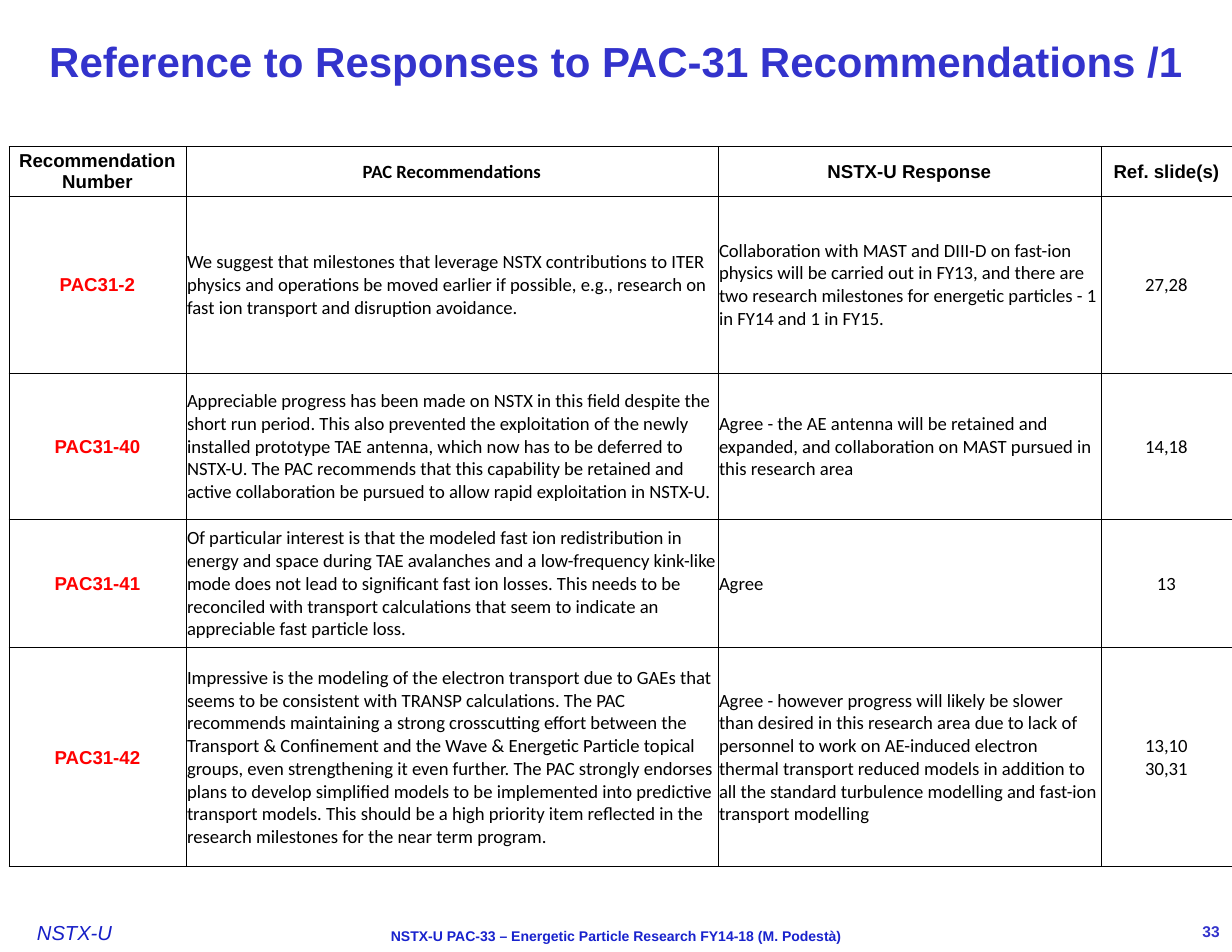
from dataclasses import dataclass

from lxml.etree import SubElement
from pptx import Presentation
from pptx.dml.color import RGBColor as RGB
from pptx.enum.text import MSO_ANCHOR as Anchor, MSO_AUTO_SIZE as AutoSize, PP_ALIGN as Align
from pptx.oxml.ns import qn
from pptx.util import Inches, Pt


@dataclass(frozen=True)
class TextStyle:
    size: float
    color: str
    font: str = "Arial"
    bold: bool = False
    italic: bool = False
    align: Align = Align.CENTER


class Theme:
    title = TextStyle(27, "3333CC", bold=True)
    project = TextStyle(13, "171FC7", italic=True, align=Align.LEFT)
    footer = TextStyle(9, "1822CD", bold=True)
    page = TextStyle(10, "3333CC", bold=True, align=Align.RIGHT)
    heading = TextStyle(12, "000000", bold=True)
    pac_heading = TextStyle(12, "000000", "Calibri", bold=True)
    number = TextStyle(12, "FF0000", bold=True)
    prose = TextStyle(12, "000000", "Calibri", align=Align.LEFT)
    reference = TextStyle(12, "000000", "Calibri")
    border = "000000"
    border_width = Pt(0.5)


class SlideBuilder:
    def __init__(self, slide):
        self.slide = slide

    def set_text(self, frame, text, style):
        frame.text = text
        for paragraph in frame.paragraphs:
            paragraph.alignment = style.align
            font = paragraph.font
            font.name, font.size = style.font, Pt(style.size)
            font.bold, font.italic = style.bold, style.italic
            font.color.rgb = RGB.from_string(style.color)

    def set_frame(self, frame, margins, anchor):
        frame.word_wrap = True
        frame.auto_size = AutoSize.NONE
        frame.vertical_anchor = anchor
        across, down = margins
        frame.margin_left = frame.margin_right = Inches(across)
        frame.margin_top = frame.margin_bottom = Inches(down)

    def title(self, text, left, top, width, height):
        heading = self.slide.shapes.title
        heading.left, heading.top = Inches(left), Inches(top)
        heading.width, heading.height = Inches(width), Inches(height)
        self.set_frame(heading.text_frame, (0.11, 0.06), Anchor.MIDDLE)
        self.set_text(heading.text_frame, text, Theme.title)

    def label(self, text, style, box, margins=(0.11, 0.06), anchor=Anchor.TOP):
        frame = self.slide.shapes.add_textbox(*map(Inches, box)).text_frame
        self.set_frame(frame, margins, anchor)
        self.set_text(frame, text, style)

    def cell(self, cell, text, style):
        cell.vertical_anchor = Anchor.MIDDLE
        cell.margin_left = cell.margin_right = cell.margin_top = Inches(0.01)
        cell.margin_bottom = 0
        self.set_text(cell.text_frame, text, style)
        # Borders come before the fill in the cell properties
        properties = cell._tc.get_or_add_tcPr()
        for side in ("a:lnL", "a:lnR", "a:lnT", "a:lnB"):
            line = SubElement(properties, qn(side), w=str(Theme.border_width))
            fill = SubElement(line, qn("a:solidFill"))
            SubElement(fill, qn("a:srgbClr"), val=Theme.border)
        cell.fill.background()

    def table(self, rows, heading_styles, body_styles, left, top, widths, heights):
        box = map(Inches, (left, top, sum(widths), sum(heights)))
        table = self.slide.shapes.add_table(len(heights), len(widths), *box).table
        table.first_row = table.horz_banding = False
        for column, width in zip(table.columns, widths):
            column.width = Inches(width)
        for row, height in zip(table.rows, heights):
            row.height = Inches(height)
        for r, texts in enumerate(rows):
            styles = body_styles if r else heading_styles
            for c, (text, style) in enumerate(zip(texts, styles)):
                self.cell(table.cell(r, c), text, style)


RECOMMENDATIONS = [
    ("Recommendation Number", "PAC Recommendations", "NSTX-U Response", "Ref. slide(s)"),
    ("PAC31-2",
     "We suggest that milestones that leverage NSTX contributions to ITER physics and "
     "operations be moved earlier if possible, e.g., research on fast ion transport and "
     "disruption avoidance.",
     "Collaboration with MAST and DIII-D on fast-ion physics will be carried out in FY13, "
     "and there are two research milestones for energetic particles - 1 in FY14 and 1 in FY15.",
     "27,28"),
    ("PAC31-40",
     "Appreciable progress has been made on NSTX in this field despite the short run period. "
     "This also prevented the exploitation of the newly installed prototype TAE antenna, which "
     "now has to be deferred to NSTX-U. The PAC recommends that this capability be retained and "
     "active collaboration be pursued to allow rapid exploitation in NSTX-U.",
     "Agree - the AE antenna will be retained and expanded, and collaboration on MAST pursued "
     "in this research area",
     "14,18"),
    ("PAC31-41",
     "Of particular interest is that the modeled fast ion redistribution in energy and space "
     "during TAE avalanches and a low-frequency kink-like mode does not lead to significant "
     "fast ion losses. This needs to be reconciled with transport calculations that seem to "
     "indicate an appreciable fast particle loss.",
     "Agree",
     "13"),
    ("PAC31-42",
     "Impressive is the modeling of the electron transport due to GAEs that seems to be "
     "consistent with TRANSP calculations. The PAC recommends maintaining a strong crosscutting "
     "effort between the Transport & Confinement and the Wave & Energetic Particle topical "
     "groups, even strengthening it even further. The PAC strongly endorses plans to develop "
     "simplified models to be implemented into predictive transport models. This should be a "
     "high priority item reflected in the research milestones for the near term program.",
     "Agree - however progress will likely be slower than desired in this research area due to "
     "lack of personnel to work on AE-induced electron thermal transport reduced models in "
     "addition to all the standard turbulence modelling and fast-ion transport modelling",
     "13,10\n30,31"),
]


def main():
    deck = Presentation()
    deck.slide_width, deck.slide_height = Inches(11), Inches(8.5)
    title_only = deck.slide_layouts[5]
    page = SlideBuilder(deck.slides.add_slide(title_only))

    # Title
    page.title("Reference to Responses to PAC-31 Recommendations /1", 0, 0, 11, 1.09)

    # Footer
    footer_top = 8.22
    page.label("NSTX-U", Theme.project, (0.33, footer_top, 0.95, 0.22), margins=(0, 0))
    page.label("NSTX-U PAC-33 – Energetic Particle Research FY14-18 (M. Podestà)",
               Theme.footer, (2.2, footer_top, 6.6, 0.42))
    page.label("33", Theme.page, (10.08, footer_top, 0.92, 0.19), anchor=Anchor.MIDDLE)

    # Recommendations and responses
    page.table(
        RECOMMENDATIONS,
        heading_styles=(Theme.heading, Theme.pac_heading, Theme.heading, Theme.heading),
        body_styles=(Theme.number, Theme.prose, Theme.prose, Theme.reference),
        left=0.08, top=1.31,
        widths=(1.58, 4.75, 3.42, 1.17),
        heights=(0.44, 1.58, 1.31, 1.14, 1.96),
    )
    deck.save("out.pptx")


if __name__ == "__main__":
    main()
